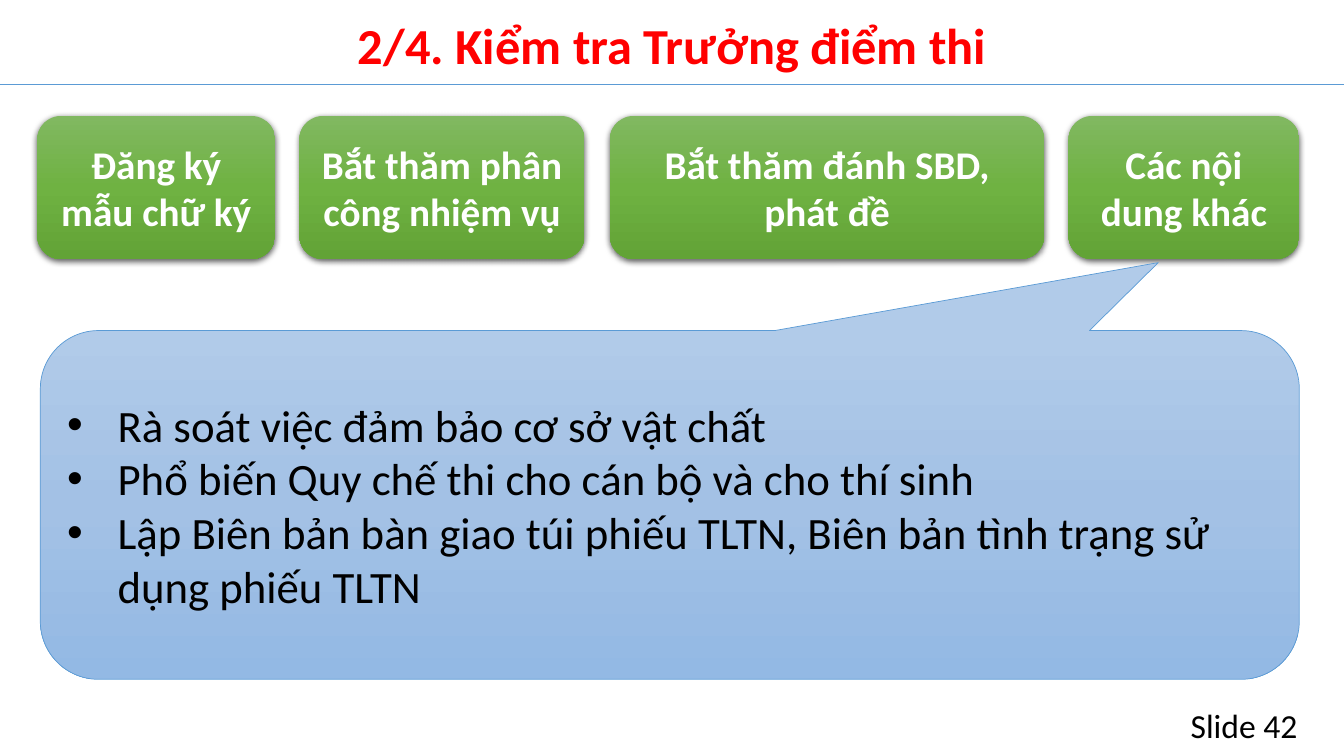
from dataclasses import dataclass

from lxml.etree import SubElement
from pptx import Presentation
from pptx.dml.color import RGBColor
from pptx.enum.shapes import MSO_CONNECTOR, MSO_SHAPE
from pptx.enum.text import MSO_ANCHOR, PP_ALIGN
from pptx.oxml.ns import qn
from pptx.shapes.autoshape import Shape
from pptx.slide import Slide
from pptx.text.text import TextFrame
from pptx.util import Pt

FONT = "Calibri"
GREENS = ("81B861", "6FB242", "62A336")
BLUES = ("B1CBE9", "A3C1E5", "93B9E4")
OUTLINE = "5B9BD5"
PAGE_WIDTH, PAGE_HEIGHT = 960, 540
STEP_TOP, STEP_HEIGHT = 82.8, 102.24


@dataclass(frozen=True)
class Step:
    text: str
    left: float
    width: float


@dataclass(frozen=True)
class Label:
    text: str
    left: float
    top: float
    width: float
    height: float
    size: float
    color: str
    align: PP_ALIGN
    anchor: MSO_ANCHOR
    bold: bool = False
    line_spacing: float = 1.0


STEPS = (
    Step("Đăng ký mẫu chữ ký", 26.64, 169.92),
    Step("Bắt thăm phân công nhiệm vụ", 213.84, 203.76),
    Step("Bắt thăm đánh SBD, phát đề", 435.6, 310.32),
    Step("Các nội dung khác", 763.2, 164.88),
)
LABELS = (
    Label("2/4. Kiểm tra Trưởng điểm thi", 26.64, 13.68, 907.2, 41.04, 36,
          "FF0000", PP_ALIGN.CENTER, MSO_ANCHOR.MIDDLE, True, 0.9),
    Label("Slide 42", 740.88, 499.68, 192.96, 36, 24,
          "000000", PP_ALIGN.RIGHT, MSO_ANCHOR.TOP),
)
OTHER_TASKS = (
    "Rà soát việc đảm bảo cơ sở vật chất",
    "Phổ biến Quy chế thi cho cán bộ và cho thí sinh",
    "Lập Biên bản bàn giao túi phiếu TLTN, Biên bản tình trạng sử dụng phiếu TLTN",
)


def rgb(color: str) -> RGBColor:
    return RGBColor.from_string(color)


def write(frame: TextFrame, texts: tuple[str, ...], size: float, color: str,
          align: PP_ALIGN, anchor: MSO_ANCHOR, bold: bool = False,
          line_spacing: float = 1.0) -> None:
    """Put each text in its own paragraph."""
    frame.word_wrap = True
    frame.vertical_anchor = anchor
    for index, text in enumerate(texts):
        para = frame.add_paragraph() if index else frame.paragraphs[0]
        para.alignment = align
        para.line_spacing = line_spacing
        span = para.add_run()
        span.text = text
        span.font.name = FONT
        span.font.size = Pt(size)
        span.font.bold = bold
        span.font.color.rgb = rgb(color)


def fill_downwards(shape: Shape, colors: tuple[str, ...]) -> None:
    """Fill with evenly spaced gradient stops from top to bottom."""
    shape.fill.gradient()
    shape.fill.gradient_angle = 270
    stops = shape.element.spPr.find(qn("a:gradFill")).find(qn("a:gsLst"))
    stops.clear()
    for index, color in enumerate(colors):
        position = index * 100000 // (len(colors) - 1)
        stop = SubElement(stops, qn("a:gs"), pos=str(position))
        SubElement(stop, qn("a:srgbClr"), val=color)


def add_soft_shadow(shape: Shape) -> None:
    effects = shape.element.spPr.find(qn("a:effectLst"))
    shadow = SubElement(effects, qn("a:outerShdw"), blurRad=str(Pt(4.5)),
                        dist=str(Pt(1.5)), dir="5400000", algn="ctr", rotWithShape="0")
    black = SubElement(shadow, qn("a:srgbClr"), val="000000")
    SubElement(black, qn("a:alpha"), val="63000")


def add_bullets(frame: TextFrame, indent: float) -> None:
    for para in frame.paragraphs:
        properties = para._p.get_or_add_pPr()
        properties.set("marL", str(Pt(indent)))
        properties.set("indent", str(-Pt(indent)))
        SubElement(properties, qn("a:buFont"), typeface="Arial")
        SubElement(properties, qn("a:buChar"), char="•")


def add_rule(page: Slide, top: float) -> None:
    rule = page.shapes.add_connector(
        MSO_CONNECTOR.STRAIGHT, Pt(0), Pt(top), Pt(PAGE_WIDTH), Pt(top))
    rule.line.color.rgb = rgb(OUTLINE)
    rule.line.width = Pt(0.5)
    SubElement(rule.element.spPr, qn("a:effectLst"))


def add_label(page: Slide, label: Label) -> None:
    box = page.shapes.add_textbox(
        Pt(label.left), Pt(label.top), Pt(label.width), Pt(label.height))
    write(box.text_frame, (label.text,), label.size, label.color,
          label.align, label.anchor, label.bold, label.line_spacing)


def add_step(page: Slide, step: Step) -> None:
    box = page.shapes.add_shape(
        MSO_SHAPE.ROUNDED_RECTANGLE,
        Pt(step.left), Pt(STEP_TOP), Pt(step.width), Pt(STEP_HEIGHT))
    box.shadow.inherit = False
    box.line.fill.background()
    fill_downwards(box, GREENS)
    add_soft_shadow(box)
    write(box.text_frame, (step.text,), 28, "FFFFFF",
          PP_ALIGN.CENTER, MSO_ANCHOR.MIDDLE, True)


def add_task_callout(page: Slide) -> None:
    callout = page.shapes.add_shape(
        MSO_SHAPE.ROUNDED_RECTANGULAR_CALLOUT,
        Pt(28.8), Pt(236.16), Pt(899.28), Pt(249.12))
    for index, value in enumerate((0.388, -0.695, 0.16667)):
        callout.adjustments[index] = value
    callout.shadow.inherit = False
    callout.line.color.rgb = rgb(OUTLINE)
    callout.line.width = Pt(0.5)
    fill_downwards(callout, BLUES)
    write(callout.text_frame, OTHER_TASKS, 32, "000000",
          PP_ALIGN.LEFT, MSO_ANCHOR.MIDDLE)
    add_bullets(callout.text_frame, 36)


def main() -> None:
    deck = Presentation()
    deck.slide_width, deck.slide_height = Pt(PAGE_WIDTH), Pt(PAGE_HEIGHT)
    page = deck.slides.add_slide(deck.slide_layouts[6])
    add_rule(page, 60.48)
    for label in LABELS:
        add_label(page, label)
    for step in STEPS:
        add_step(page, step)
    add_task_callout(page)
    deck.save("out.pptx")


if __name__ == "__main__":
    main()
